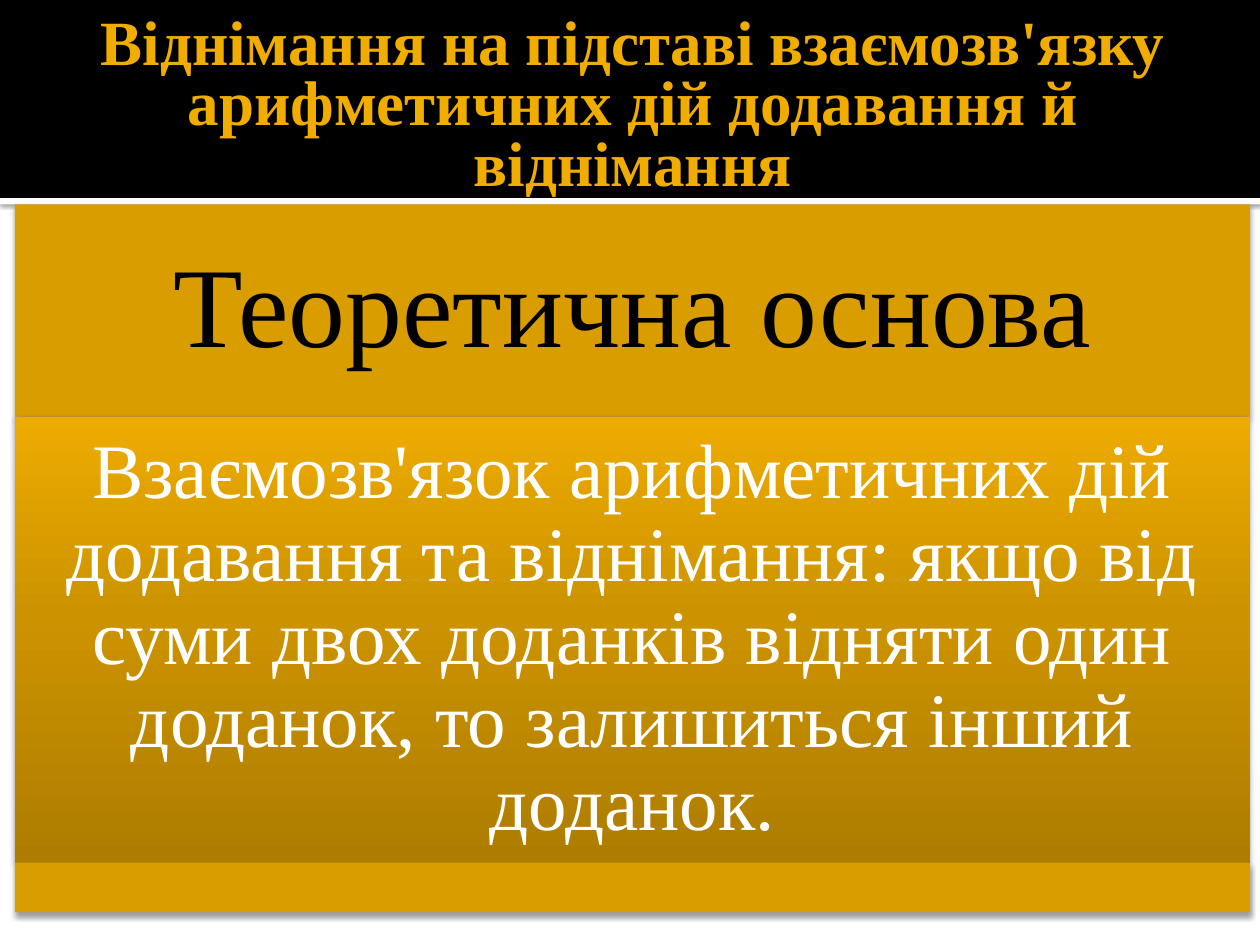
from copy import deepcopy
from dataclasses import dataclass

from lxml import etree
from pptx import Presentation
from pptx import util as u
from pptx.dml.color import RGBColor
from pptx.enum import shapes, text
from pptx.oxml.ns import qn


@dataclass(frozen=True)
class Theme:
    font: str = "Times New Roman"
    black: str = "000000"
    white: str = "FFFFFF"
    gold: str = "F0AD00"
    amber: str = "DA9D00"
    shade: tuple = ((0, "AE7D00"), (55, "CC9300"), (100, "EEAB00"))
    title_size: int = 36
    heading_size: int = 65
    body_size: int = 44
    rule_shadow: tuple = (60, 2.5, 0.8)
    panel_shadow: tuple = (38, 3.1, 2)


def set_all(target, values):
    for name, value in values.items():
        setattr(target, name, value)


class SlideBuilder:
    """Draws styled bands and text on the current slide."""

    def __init__(self, slide, theme):
        self.slide = slide
        self.theme = theme

    def band(self, area, fill, shadow=None):
        box = self.slide.shapes.add_shape(shapes.MSO_SHAPE.RECTANGLE, *map(u.Cm, area))
        if isinstance(fill, str):
            box.fill.solid()
            box.fill.fore_color.rgb = RGBColor.from_string(fill)
        else:
            self.gradient(box, fill)
        box.line.fill.background()
        box.shadow.inherit = False
        if shadow:
            self.shadow(box, *shadow)

    def gradient(self, box, stops):
        box.fill.gradient()
        box.fill.gradient_angle = 90
        stop_list = next(box._element.spPr.iter(qn("a:gsLst")))
        stop_list.insert(1, deepcopy(stop_list[0]))
        for stop, (position, color) in zip(box.fill.gradient_stops, stops):
            stop.position = position / 100
            stop.color.rgb = RGBColor.from_string(color)

    def shadow(self, box, opacity, blur, distance):
        effects = box._element.spPr.find(qn("a:effectLst"))
        outer = etree.SubElement(
            effects, qn("a:outerShdw"), blurRad=str(u.Pt(blur)),
            dist=str(u.Pt(distance)), dir="5400000", algn="ctr", rotWithShape="0")
        color = etree.SubElement(outer, qn("a:srgbClr"), val=self.theme.black)
        etree.SubElement(color, qn("a:alpha"), val=str(opacity * 1000))

    def label(self, area, words, size, color, insets, spacing=0.9, bold=False):
        frame = self.slide.shapes.add_textbox(*map(u.Cm, area)).text_frame
        sides = ("margin_left", "margin_top", "margin_right", "margin_bottom")
        set_all(frame, {"word_wrap": True, "vertical_anchor": text.MSO_ANCHOR.MIDDLE,
                        **dict(zip(sides, map(u.Cm, insets)))})
        para = frame.paragraphs[0]
        set_all(para, {"alignment": text.PP_ALIGN.CENTER, "line_spacing": spacing})
        span = para.add_run()
        span.text = words
        set_all(span.font, {"name": self.theme.font, "size": u.Pt(size), "bold": bold})
        span.font.color.rgb = RGBColor.from_string(color)


def main():
    deck = Presentation()
    set_all(deck, {"slide_width": u.Cm(25.4), "slide_height": u.Cm(19.05)})
    theme = Theme()
    page = SlideBuilder(deck.slides.add_slide(deck.slide_layouts[6]), theme)

    header_height = 3.99
    page.band((0, header_height, 25.4, 0.13), theme.white, theme.rule_shadow)
    page.band((0, 0, 25.4, header_height), theme.black)
    page.label((1.27, 0.43, 22.86, 3.48),
               "Віднімання на підставі взаємозв'язку арифметичних дій додавання й віднімання",
               theme.title_size, theme.gold, (0.25, 0.13, 0.13, 0.13), 0.8, True)

    panels = [
        (4.28, theme.amber, "Теоретична основа", theme.heading_size, theme.black, 0.69),
        (8.99, theme.shade,
         "Взаємозв'язок арифметичних дій додавання та віднімання: якщо від суми двох "
         "доданків відняти один доданок, то залишиться інший доданок.",
         theme.body_size, theme.white, 0.46),
        (1, theme.amber, None, None, None, None),
    ]
    top = 4.12
    for height, fill, words, size, color, inset in panels:
        area = (0.3, top, 24.9, height)
        page.band(area, fill, theme.panel_shadow)
        if words:
            page.label(area, words, size, color, [inset] * 4)
        top += height

    deck.save("out.pptx")


if __name__ == "__main__":
    main()
